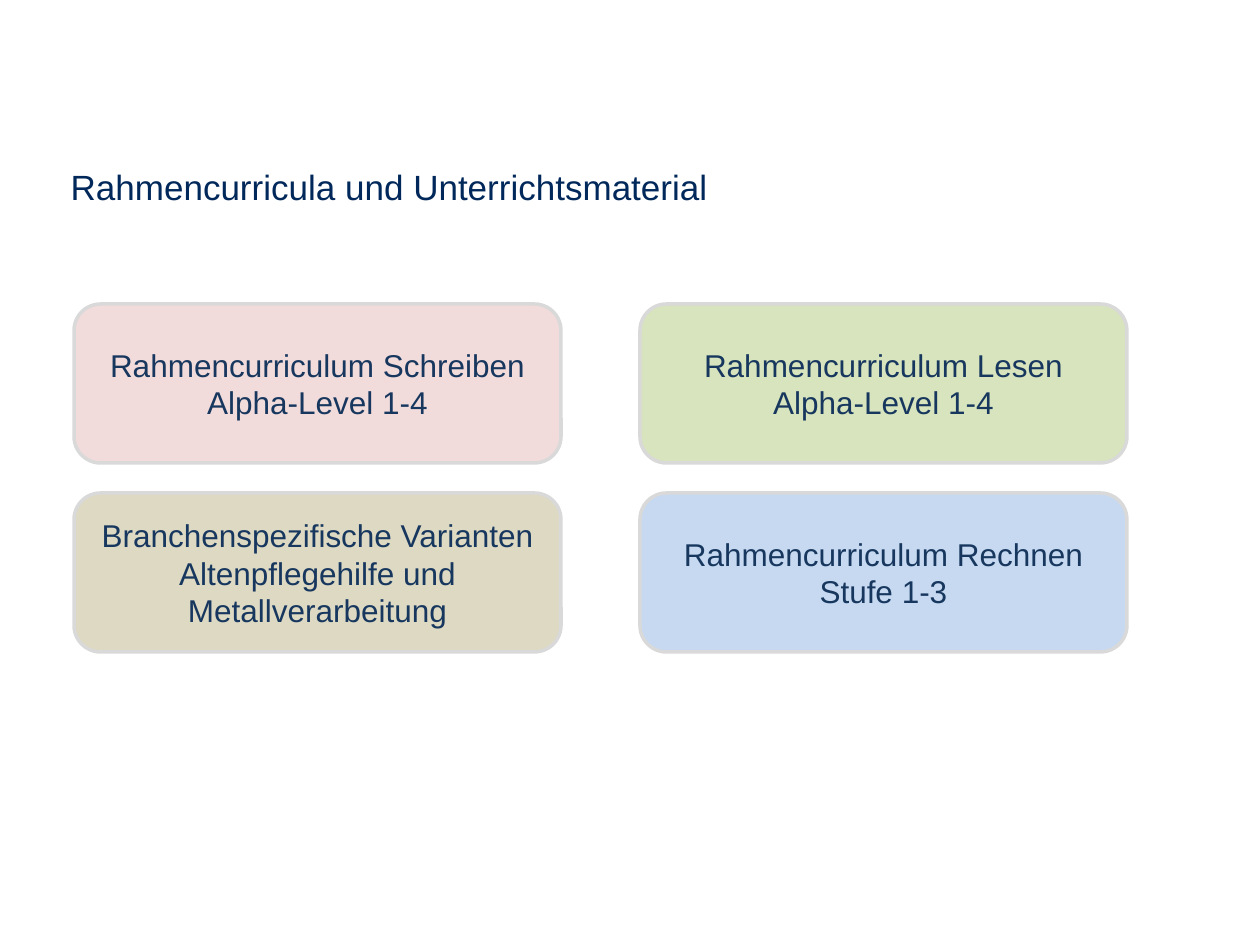
from pptx import Presentation
from pptx.dml.color import RGBColor
from pptx.enum.shapes import MSO_SHAPE
from pptx.enum.text import MSO_ANCHOR, PP_ALIGN
from pptx.util import Pt

PX = 914400 // 126
ROUNDED = MSO_SHAPE.ROUNDED_RECTANGLE
MIDDLE = MSO_ANCHOR.MIDDLE
CENTER, LEFT = PP_ALIGN.CENTER, PP_ALIGN.LEFT


def color(hex_string):
    return RGBColor.from_string(hex_string)


def format_paragraph(paragraph, size, hex_string, alignment):
    paragraph.alignment = alignment
    paragraph.font.name = "Arial"
    paragraph.font.size = Pt(size)
    paragraph.font.color.rgb = color(hex_string)


presentation = Presentation()
presentation.slide_width = 1260 * PX
presentation.slide_height = 945 * PX
slide = presentation.slides.add_slide(presentation.slide_layouts[5])

title = slide.shapes.title
title.left, title.top, title.width, title.height = 58 * PX, 159 * PX, 1138 * PX, 55 * PX
title.text_frame.text = "Rahmencurricula und Unterrichtsmaterial"
title.text_frame.vertical_anchor = MIDDLE
format_paragraph(title.text_frame.paragraphs[0], 20, "00285A", LEFT)

# Two by two grid of curricula, row by row; \v is a line break
CURRICULA = [
    ("Rahmencurriculum Schreiben\vAlpha-Level 1-4", "F2DCDB"),
    ("Rahmencurriculum Lesen\vAlpha-Level 1-4", "D7E4BD"),
    ("Branchenspezifische Varianten\vAltenpflegehilfe und Metallverarbeitung", "DDD9C3"),
    ("Rahmencurriculum Rechnen\vStufe 1-3", "C6D9F1"),
]
GRID_LEFT, GRID_TOP = 74, 304
BOX_WIDTH, BOX_HEIGHT = 487, 159
COLUMN_STEP, ROW_STEP = 566, 189

for index, (text, fill) in enumerate(CURRICULA):
    row, column = divmod(index, 2)
    box = slide.shapes.add_shape(
        ROUNDED,
        (GRID_LEFT + column * COLUMN_STEP) * PX,
        (GRID_TOP + row * ROW_STEP) * PX,
        BOX_WIDTH * PX,
        BOX_HEIGHT * PX,
    )
    box.shadow.inherit = False
    box.fill.solid()
    box.fill.fore_color.rgb = color(fill)
    box.line.color.rgb = color("D9D9D9")
    box.line.width = Pt(2)
    box.text_frame.word_wrap = True
    box.text_frame.vertical_anchor = MIDDLE
    paragraph = box.text_frame.paragraphs[0]
    paragraph.text = text
    format_paragraph(paragraph, 18, "17375E", CENTER)

presentation.save("out.pptx")
